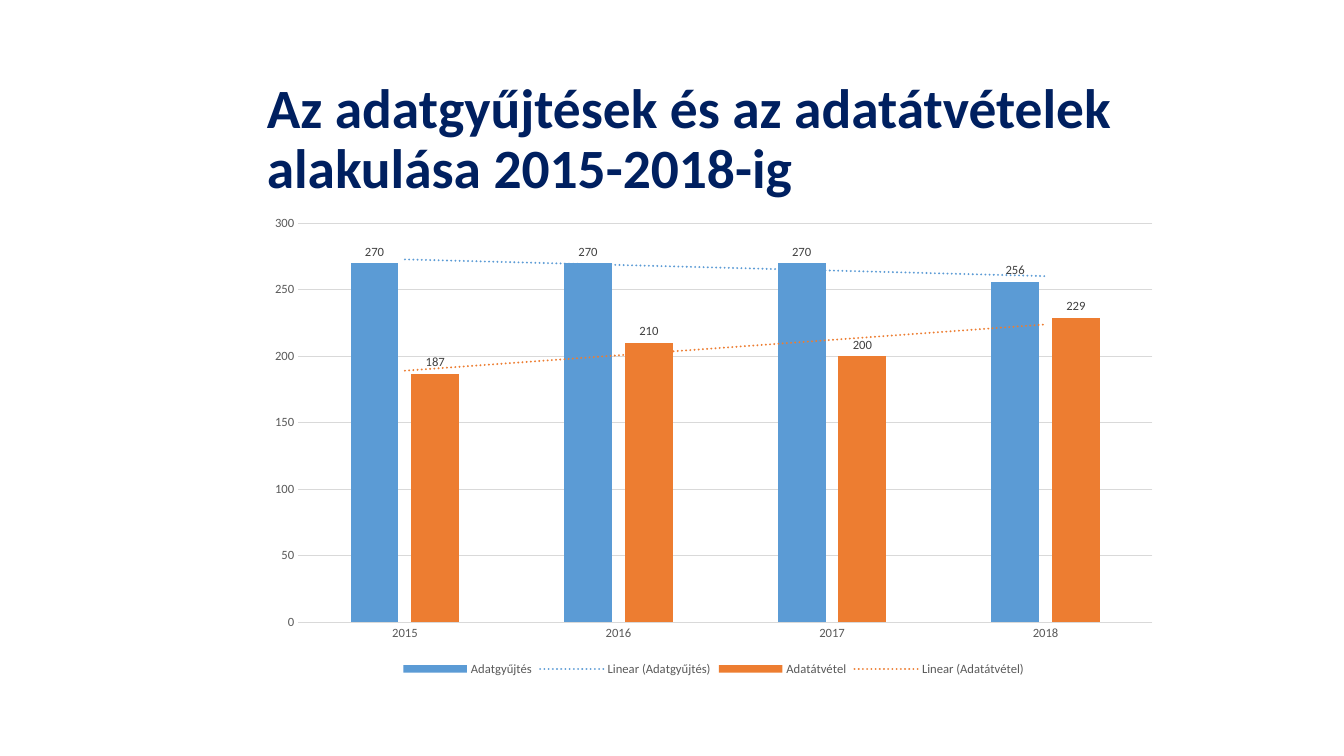
from lxml import etree
from pptx import Presentation
from pptx.chart.data import CategoryChartData
from pptx.dml.color import RGBColor
from pptx.enum.chart import XL_CHART_TYPE, XL_LABEL_POSITION, XL_LEGEND_POSITION, XL_TICK_MARK
from pptx.enum.text import MSO_ANCHOR, MSO_AUTO_SIZE, PP_ALIGN
from pptx.oxml import parse_xml
from pptx.oxml.ns import nsdecls, qn
from pptx.util import Inches, Pt

COLUMNS = XL_CHART_TYPE.COLUMN_CLUSTERED
OUTSIDE_END = XL_LABEL_POSITION.OUTSIDE_END
LEGEND_BOTTOM = XL_LEGEND_POSITION.BOTTOM
NO_TICK = XL_TICK_MARK.NONE

# Content
TITLE = "Az adatgyűjtések és az adatátvételek alakulása 2015-2018-ig"
YEARS = ["2015", "2016", "2017", "2018"]
SERIES = [
    ("Adatgyűjtés", [270, 270, 270, 256], "blue"),
    ("Adatátvétel", [187, 210, 200, 229], "orange"),
]

# Style
FONT = "Calibri"
COLORS = {
    "navy": "002060",
    "blue": "5B9BD5",
    "orange": "ED7D31",
    "grid": "D9D9D9",
    "axis": "595959",
    "label": "404040",
    "black": "000000",
}

# Layout in inches: title and chart share one column
SLIDE_WIDTH, SLIDE_HEIGHT = 13.33, 7.5
COLUMN_LEFT, COLUMN_WIDTH = 0.191 * SLIDE_WIDTH, 0.68 * SLIDE_WIDTH
TITLE_TOP, TITLE_HEIGHT = 0.124 * SLIDE_HEIGHT, 0.123 * SLIDE_HEIGHT
CHART_TOP, CHART_HEIGHT = 0.273 * SLIDE_HEIGHT, 0.627 * SLIDE_HEIGHT


def rgb(name):
    return RGBColor.from_string(COLORS[name])


def style_font(font, size, color, bold=False):
    font.name = FONT
    font.size = Pt(size)
    font.bold = bold
    font.color.rgb = rgb(color)


def style_line(line, color, width=0.75):
    line.color.rgb = rgb(color)
    line.width = Pt(width)


def add_trendline(series, color):
    trendline = parse_xml(
        f'<c:trendline {nsdecls("c", "a")}><c:spPr><a:ln w="{Pt(1.5)}" cap="rnd">'
        f'<a:solidFill><a:srgbClr val="{COLORS[color]}"/></a:solidFill>'
        '<a:prstDash val="sysDot"/></a:ln></c:spPr>'
        '<c:trendlineType val="linear"/><c:dispRSqr val="0"/><c:dispEq val="0"/>'
        '</c:trendline>'
    )
    series._element.find(qn("c:cat")).addprevious(trendline)


def add_title(slide):
    title = slide.shapes.title
    title.left, title.top = Inches(COLUMN_LEFT), Inches(TITLE_TOP)
    title.width, title.height = Inches(COLUMN_WIDTH), Inches(TITLE_HEIGHT)
    frame = title.text_frame
    frame.text = TITLE
    frame.word_wrap = True
    frame.auto_size = MSO_AUTO_SIZE.NONE
    frame.vertical_anchor = MSO_ANCHOR.MIDDLE
    paragraph = frame.paragraphs[0]
    paragraph.alignment = PP_ALIGN.LEFT
    paragraph.line_spacing = 0.9
    style_font(paragraph.font, 39.6, "navy", bold=True)


def add_column_chart(slide):
    data = CategoryChartData()
    data.categories = YEARS
    for name, values, _ in SERIES:
        data.add_series(name, values)
    chart = slide.shapes.add_chart(
        COLUMNS, Inches(COLUMN_LEFT), Inches(CHART_TOP),
        Inches(COLUMN_WIDTH), Inches(CHART_HEIGHT), data,
    ).chart
    chart.has_title = False
    style_font(chart.font, 10, "black")

    # Columns, value labels and trend lines
    plot = chart.plots[0]
    plot.vary_by_categories = False
    plot.gap_width, plot.overlap = 219, -27
    for series, (_, _, color) in zip(plot.series, SERIES):
        series.format.fill.solid()
        series.format.fill.fore_color.rgb = rgb(color)
        series.invert_if_negative = False
        labels = series.data_labels
        labels.show_value = True
        labels.position = OUTSIDE_END
        style_font(labels.font, 9, "label")
        add_trendline(series, color)

    # Axes
    years, counts = chart.category_axis, chart.value_axis
    for axis in (years, counts):
        axis.major_tick_mark = axis.minor_tick_mark = NO_TICK
        style_font(axis.tick_labels.font, 9, "axis")
    style_line(years.format.line, "grid")
    counts.format.line.fill.background()
    counts.minimum_scale, counts.maximum_scale, counts.major_unit = 0, 300, 50
    counts.has_major_gridlines = True
    style_line(counts.major_gridlines.format.line, "grid")

    # Legend
    chart.has_legend = True
    chart.legend.position = LEGEND_BOTTOM
    chart.legend.include_in_layout = False
    style_font(chart.legend.font, 9, "axis")


def main():
    presentation = Presentation()
    presentation.slide_width = Inches(SLIDE_WIDTH)
    presentation.slide_height = Inches(SLIDE_HEIGHT)
    slide = presentation.slides.add_slide(presentation.slide_layouts.get_by_name("Title Only"))
    add_title(slide)
    add_column_chart(slide)
    presentation.save("out.pptx")


if __name__ == "__main__":
    main()
